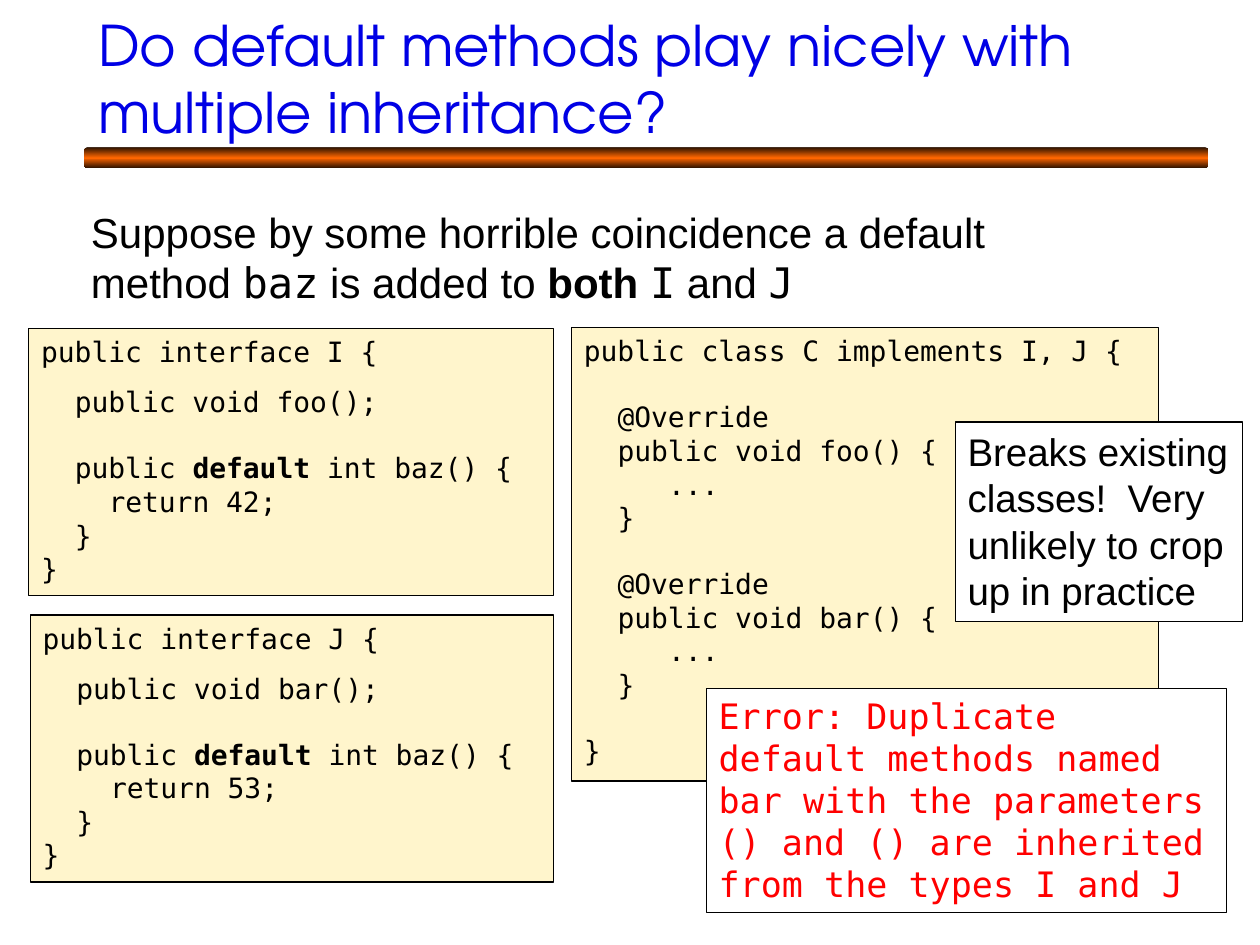
from pptx import Presentation
from pptx.dml.color import RGBColor
from pptx.enum.shapes import MSO_SHAPE
from pptx.enum.text import MSO_ANCHOR, PP_ALIGN
from pptx.util import Pt

RECTANGLE = MSO_SHAPE.RECTANGLE
ROUNDED = MSO_SHAPE.ROUNDED_RECTANGLE
TOP, MIDDLE = MSO_ANCHOR.TOP, MSO_ANCHOR.MIDDLE
LEFT = PP_ALIGN.LEFT

BLUE = RGBColor(0x00, 0x00, 0xE5)
BLACK = RGBColor(0x00, 0x00, 0x00)
RED = RGBColor(0xFF, 0x00, 0x00)
WHITE = RGBColor(0xFF, 0xFF, 0xFF)
CREAM = RGBColor(0xFF, 0xF5, 0xCC)
ORANGE = RGBColor(0xFF, 0x66, 0x00)
BROWN = RGBColor(0x2A, 0x11, 0x00)

SANS, MONO, HEADING = "Arial", "DejaVu Sans Mono", "TeX Gyre Adventor"
CODE_SIZE = 16
CHAR_WIDTH = 9.63
BLANK_LINE = 18.63
HALF_LINE = 9.31


def add_box(left, top, width, height, fill):
    box = page.shapes.add_shape(RECTANGLE, Pt(left), Pt(top), Pt(width), Pt(height))
    box.shadow.inherit = False
    box.fill.solid()
    box.fill.fore_color.rgb = fill
    box.line.color.rgb = BLACK
    box.line.width = Pt(0.75)
    box.text_frame.word_wrap = True
    box.text_frame.vertical_anchor = TOP
    return box.text_frame


def add_spans(para, spans, size, color):
    para.alignment = LEFT
    for text, font, bold in spans:
        span = para.add_run()
        span.text = text
        span.font.name = font
        span.font.size = Pt(size)
        span.font.bold = bold
        span.font.color.rgb = color


deck = Presentation()
deck.slide_width, deck.slide_height = Pt(720), Pt(540)
page = deck.slides.add_slide(deck.slide_layouts[6])

bar = page.shapes.add_shape(ROUNDED, Pt(48.2), Pt(84.2), Pt(642.2), Pt(12))
bar.shadow.inherit = False
bar.adjustments[0] = 0.167
bar.line.fill.background()
bar.fill.gradient()
bar.fill.gradient_angle = 90
stops = bar.fill.gradient_stops
stops[0].color.rgb, stops[0].position = BROWN, 0
stops[1].color.rgb, stops[1].position = ORANGE, 0.5
stop_list = bar.fill._fill._gradFill.gsLst
last_stop = stop_list.makeelement(stop_list[0].tag, {"pos": "100000"})
last_color = stop_list[0][0].makeelement(stop_list[0][0].tag, {"val": str(BROWN)})
last_stop.append(last_color)
stop_list.append(last_stop)

headings = [
    ((49, 8.6, 642.2, 72), MIDDLE, 32, BLUE, [
        ("Do default methods play nicely with multiple inheritance?", HEADING, False),
    ]),
    ((44.9, 114.5, 586, 65.5), TOP, 24, BLACK, [
        ("Suppose by some horrible coincidence a default method ", SANS, False),
        ("baz", MONO, False),
        (" is added to ", SANS, False),
        ("both ", SANS, True),
        ("I", MONO, False),
        (" and ", SANS, False),
        ("J", MONO, False),
    ]),
]
for bounds, anchor, size, color, spans in headings:
    frame = page.shapes.add_textbox(*map(Pt, bounds)).text_frame
    frame.word_wrap = True
    frame.vertical_anchor = anchor
    add_spans(frame.paragraphs[0], spans, size, color)

listings = []
for name, method, value, bounds in [
    ("I", "foo", 42, (16.4, 187.8, 300, 152.6)),
    ("J", "bar", 53, (17.3, 351.4, 299, 152.6)),
]:
    listings.append((bounds, [
        (0, 0, [f"public interface {name} {{"]),
        (2, HALF_LINE, [f"public void {method}();"]),
        (2, BLANK_LINE, ["public ", "default ", "int baz() {"]),
        (4, 0, [f"return {value};"]),
        (2, 0, ["}"]),
        (0, 0, ["}"]),
    ]))

class_lines = [(0, 0, ["public class C implements I, J {"])]
for method in ("foo", "bar"):
    class_lines += [
        (2, BLANK_LINE, ["@Override"]),
        (2, 0, [f"public void {method}() {{"]),
        (5, 0, ["..."]),
        (2, 0, ["}"]),
    ]
class_lines.append((0, BLANK_LINE, ["}"]))
listings.append(((326.6, 187.2, 335.4, 259.2), class_lines))

for bounds, lines in listings:
    frame = add_box(*bounds, CREAM)
    for number, (indent, gap, words) in enumerate(lines):
        para = frame.add_paragraph() if number else frame.paragraphs[0]
        para.space_before = Pt(gap)
        para._p.get_or_add_pPr().set("marL", str(Pt(indent * CHAR_WIDTH)))
        spans = [(word, MONO, word == "default ") for word in words]
        add_spans(para, spans, CODE_SIZE, BLACK)

notices = [
    ((403.6, 393.4, 297.4, 128.2), MONO, 20, RED,
     "Error: Duplicate default methods named bar with the parameters () and () "
     "are inherited from the types I and J"),
    ((545.8, 241.2, 164.2, 113.8), SANS, 22, BLACK,
     "Breaks existing classes!  Very unlikely to crop up in practice"),
]
for bounds, font, size, color, text in notices:
    frame = add_box(*bounds, WHITE)
    add_spans(frame.paragraphs[0], [(text, font, False)], size, color)

deck.save("out.pptx")
